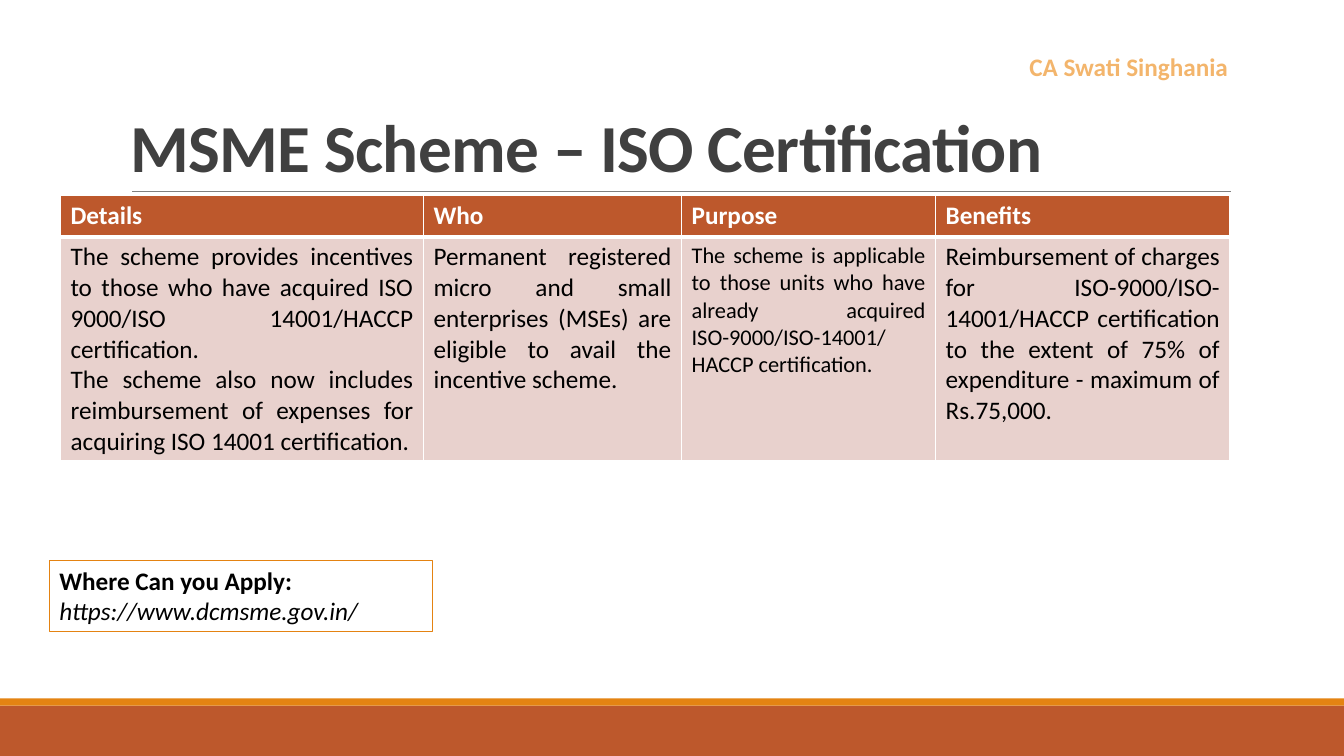
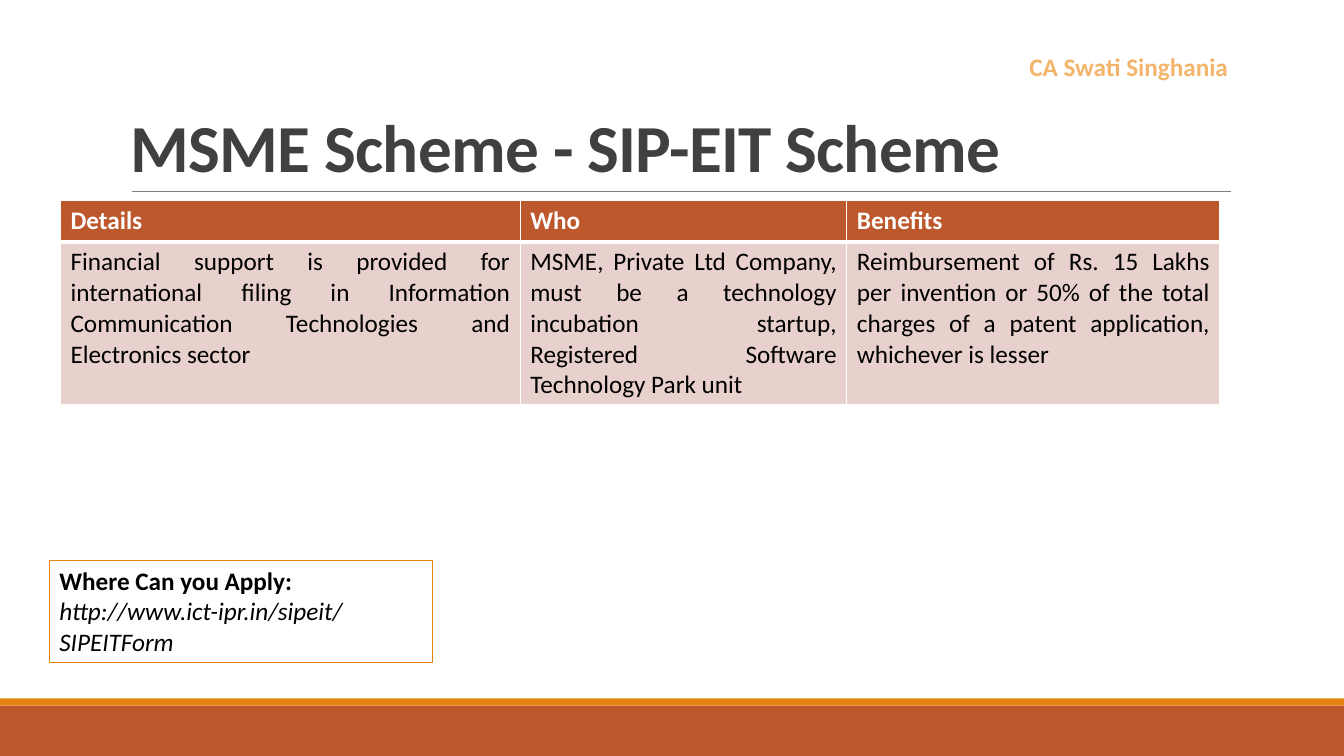
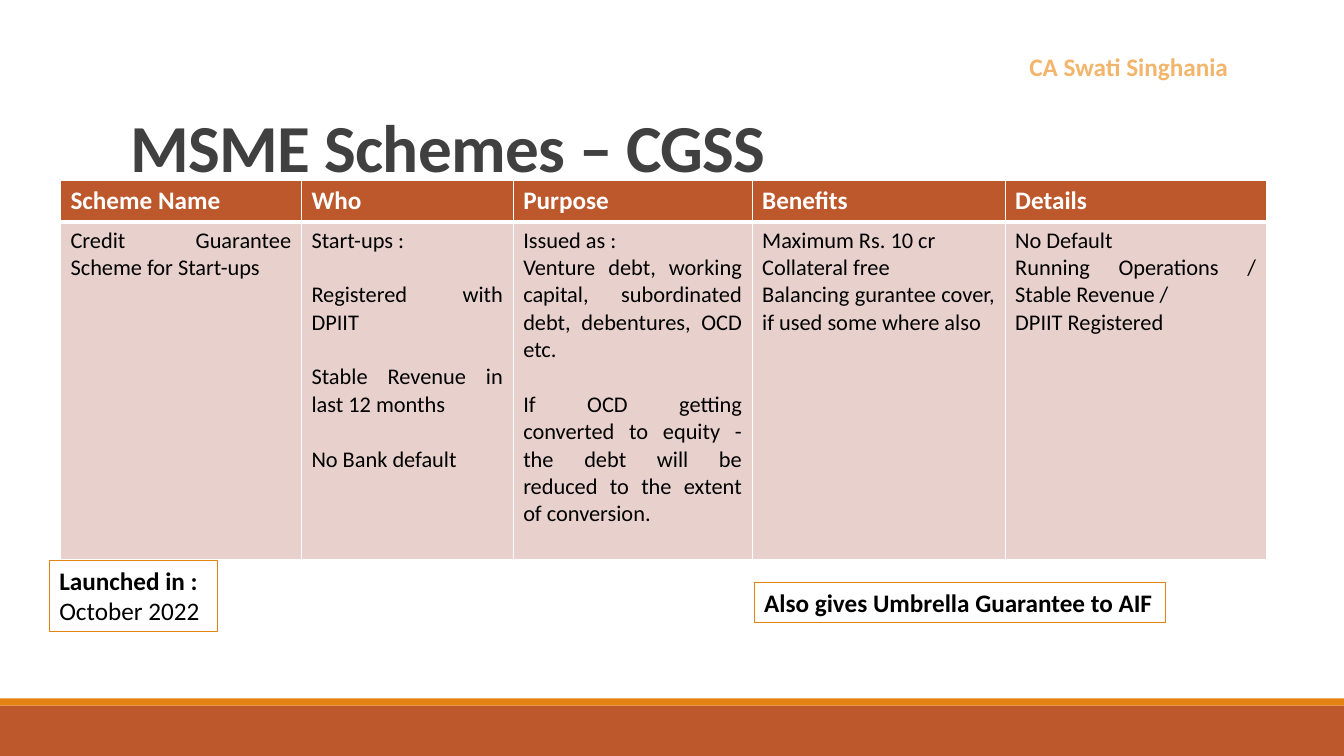
"""Build three slides on MSME support schemes."""
import pptx
import pptx.dml.color
import pptx.enum.shapes
import pptx.enum.text
import pptx.oxml
import pptx.oxml.ns
import pptx.util

Inches = pptx.util.Inches
Pt = pptx.util.Pt
RGBColor = pptx.dml.color.RGBColor
Align = pptx.enum.text.PP_ALIGN
Rectangle = pptx.enum.shapes.MSO_SHAPE.RECTANGLE

FONT = "Calibri"
RUST = RGBColor(0xBD, 0x58, 0x2C)
ORANGE = RGBColor(0xE4, 0x83, 0x12)
PALE_ORANGE = RGBColor(0xF3, 0xB5, 0x6C)
BLUSH = RGBColor(0xE8, 0xD1, 0xCD)
CHARCOAL = RGBColor(0x40, 0x40, 0x40)
GREY = RGBColor(0x80, 0x80, 0x80)
BLACK = RGBColor(0, 0, 0)
WHITE = RGBColor(0xFF, 0xFF, 0xFF)

SLIDE_WIDTH = 13.33
HEADER_HEIGHT = 0.41
TABLE_LEFT = 0.6
BOX_LEFT, BOX_TOP = 0.49, 5.56


def write(frame, text, size=18, color=BLACK, bold=False, italic=False,
          align=Align.LEFT, line_spacing=None, tracking=None):
    """Append lines to a frame; an empty line in the text becomes a gap."""
    for block_index, block in enumerate(text.split("\n\n")):
        for line_index, line in enumerate(block.split("\n")):
            paragraph = frame.paragraphs[0] if not frame.text else frame.add_paragraph()
            paragraph.alignment = align
            if block_index and not line_index:
                paragraph.space_before = Pt(size * 1.22)
            if line_spacing:
                paragraph.line_spacing = line_spacing
            run = paragraph.add_run()
            run.text = line
            run.font.name = FONT
            run.font.size = Pt(size)
            run.font.bold = bold
            run.font.italic = italic
            run.font.color.rgb = color
            if tracking:
                run._r.get_or_add_rPr().set("spc", str(round(tracking * 100)))


def add_text(slide, text, left, top, width, height,
             anchor=pptx.enum.text.MSO_ANCHOR.TOP, **style):
    """Add a wrapping text box."""
    frame = slide.shapes.add_textbox(
        Inches(left), Inches(top), Inches(width), Inches(height)).text_frame
    frame.word_wrap = True
    frame.vertical_anchor = anchor
    write(frame, text, **style)


def add_band(slide, top, height, color):
    """Add a band across the whole slide."""
    band = slide.shapes.add_shape(
        Rectangle, 0, Inches(top), Inches(SLIDE_WIDTH), Inches(height))
    band.shadow.inherit = False
    band.fill.solid()
    band.fill.fore_color.rgb = color
    band.line.fill.background()


def add_title_rule(slide):
    """Add the thin line under the title."""
    rule = slide.shapes.add_connector(
        pptx.enum.shapes.MSO_CONNECTOR.STRAIGHT,
        Inches(1.31), Inches(1.9), Inches(12.21), Inches(1.9))
    rule.line.color.rgb = GREY
    rule.line.width = Pt(0.5)
    rule._element.spPr.append(pptx.oxml.parse_xml(
        f"<a:effectLst {pptx.oxml.ns.nsdecls('a')}/>"))


def add_scheme_slide(deck, title):
    """Add a slide with the bands, title, rule and author name."""
    slide = deck.slides.add_slide(deck.slide_layouts[6])
    add_band(slide, 7, 0.5, RUST)
    add_band(slide, 6.93, 0.07, ORANGE)
    add_title_rule(slide)
    add_text(slide, title, 1.2, 0.31, 11, 1.59,
             anchor=pptx.enum.text.MSO_ANCHOR.BOTTOM, size=48, color=CHARCOAL,
             bold=True, line_spacing=0.85, tracking=-0.5)
    add_text(slide, "CA Swati Singhania", 10.11, 0.46, 2.29, 0.4,
             color=PALE_ORANGE, bold=True)
    return slide


def style_cell(cell, fill, bottom_width):
    """Fill a cell and give it white borders."""
    cell.fill.solid()
    cell.fill.fore_color.rgb = fill
    properties = cell._tc.get_or_add_tcPr()
    widths = {"lnL": 1, "lnR": 1, "lnT": 1, "lnB": bottom_width}
    for position, (side, width) in enumerate(widths.items()):
        properties.insert(position, pptx.oxml.parse_xml(
            f'<a:{side} {pptx.oxml.ns.nsdecls("a")} w="{Pt(width)}">'
            f'<a:solidFill><a:srgbClr val="{WHITE}"/></a:solidFill></a:{side}>'))


def add_scheme_table(slide, top, body_height, columns):
    """Add a table from (heading, width, text, text size) columns."""
    total_width = sum(width for _, width, _, _ in columns)
    table = slide.shapes.add_table(
        2, len(columns), Inches(TABLE_LEFT), Inches(top),
        Inches(total_width), Inches(HEADER_HEIGHT + body_height)).table
    table.horz_banding = False
    table.rows[0].height = Inches(HEADER_HEIGHT)
    table.rows[1].height = Inches(body_height)
    for index, (heading, width, text, size) in enumerate(columns):
        table.columns[index].width = Inches(width)
        header, body = table.cell(0, index), table.cell(1, index)
        style_cell(header, RUST, 3)
        style_cell(body, BLUSH, 1)
        write(header.text_frame, heading, color=WHITE, bold=True)
        write(body.text_frame, text, size=size, align=Align.JUSTIFY)


def add_note_box(slide, heading, detail="", left=BOX_LEFT, top=BOX_TOP,
                 width=3.8, height=0.71, wrap=True, italic=False):
    """Add an outlined box with a bold heading and an optional detail."""
    box = slide.shapes.add_shape(
        Rectangle, Inches(left), Inches(top), Inches(width), Inches(height))
    box.shadow.inherit = False
    box.fill.background()
    box.line.color.rgb = ORANGE
    box.line.width = Pt(0.75)
    frame = box.text_frame
    frame.word_wrap = wrap
    frame.vertical_anchor = pptx.enum.text.MSO_ANCHOR.TOP
    write(frame, heading, bold=True)
    if detail:
        write(frame, detail, italic=italic)


def add_iso_slide(deck):
    """Add the ISO certification slide."""
    slide = add_scheme_slide(deck, "MSME Scheme – ISO Certification")
    add_scheme_table(slide, 1.94, 2.22, [
        ("Details", 3.6,
         "The scheme provides incentives to those who have acquired "
         "ISO 9000/ISO 14001/HACCP certification.\n"
         "The scheme also now includes reimbursement of expenses for "
         "acquiring ISO 14001 certification.", 18),
        ("Who", 2.56,
         "Permanent registered micro and small enterprises (MSEs) are "
         "eligible to avail the incentive scheme.", 18),
        ("Purpose", 2.52,
         "The scheme is applicable to those units who have already acquired "
         "ISO-9000/ISO-14001/ HACCP certification.", 16),
        ("Benefits", 2.92,
         "Reimbursement of charges for ISO-9000/ISO- 14001/HACCP certification "
         "to the extent of 75% of expenditure - maximum of Rs.75,000.", 18),
    ])
    add_note_box(slide, "Where Can you Apply:", "https://www.dcmsme.gov.in/",
                 italic=True)


def add_sip_eit_slide(deck):
    """Add the SIP-EIT slide."""
    slide = add_scheme_slide(deck, "MSME Scheme - SIP-EIT Scheme")
    add_scheme_table(slide, 1.99, 1.61, [
        ("Details", 4.56,
         "Financial support is provided for international filing in Information "
         "Communication Technologies and Electronics sector", 18),
        ("Who", 3.24,
         "MSME, Private Ltd Company, must be a technology incubation startup, "
         "Registered Software Technology Park unit", 18),
        ("Benefits", 3.7,
         "Reimbursement of Rs. 15 Lakhs per invention or 50% of the total "
         "charges of a patent application, whichever is lesser", 18),
    ])
    add_note_box(slide, "Where Can you Apply:",
                 "http://www.ict-ipr.in/sipeit/SIPEITForm",
                 height=1.01, italic=True)


def add_cgss_slide(deck):
    """Add the credit guarantee slide."""
    slide = add_scheme_slide(deck, "MSME Schemes – CGSS")
    add_scheme_table(slide, 1.79, 3.35, [
        ("Scheme Name", 2.39, "Credit Guarantee Scheme for Start-ups", 16),
        ("Who", 2.1,
         "Start-ups :\n\nRegistered with DPIIT\n\n"
         "Stable Revenue in last 12 months\n\nNo Bank default", 16),
        ("Purpose", 2.37,
         "Issued as :\nVenture debt, working capital, subordinated debt, "
         "debentures, OCD etc.\n\nIf OCD getting converted to equity - "
         "the debt will be reduced to the extent of conversion.", 16),
        ("Benefits", 2.51,
         "Maximum Rs. 10 cr\nCollateral free\n"
         "Balancing gurantee cover, if used some where also", 16),
        ("Details", 2.59,
         "No Default\nRunning Operations / Stable Revenue /\n"
         "DPIIT Registered", 16),
    ])
    add_note_box(slide, "Launched in :", "October 2022", width=1.67, wrap=False)
    add_note_box(slide, "Also gives Umbrella Guarantee to AIF",
                 left=7.48, top=5.78, width=4.08, height=0.4, wrap=False)


def main():
    """Build and save the deck."""
    deck = pptx.Presentation()
    deck.slide_width = Inches(SLIDE_WIDTH)
    deck.slide_height = Inches(7.5)
    add_iso_slide(deck)
    add_sip_eit_slide(deck)
    add_cgss_slide(deck)
    deck.save("out.pptx")


if __name__ == "__main__":
    main()
